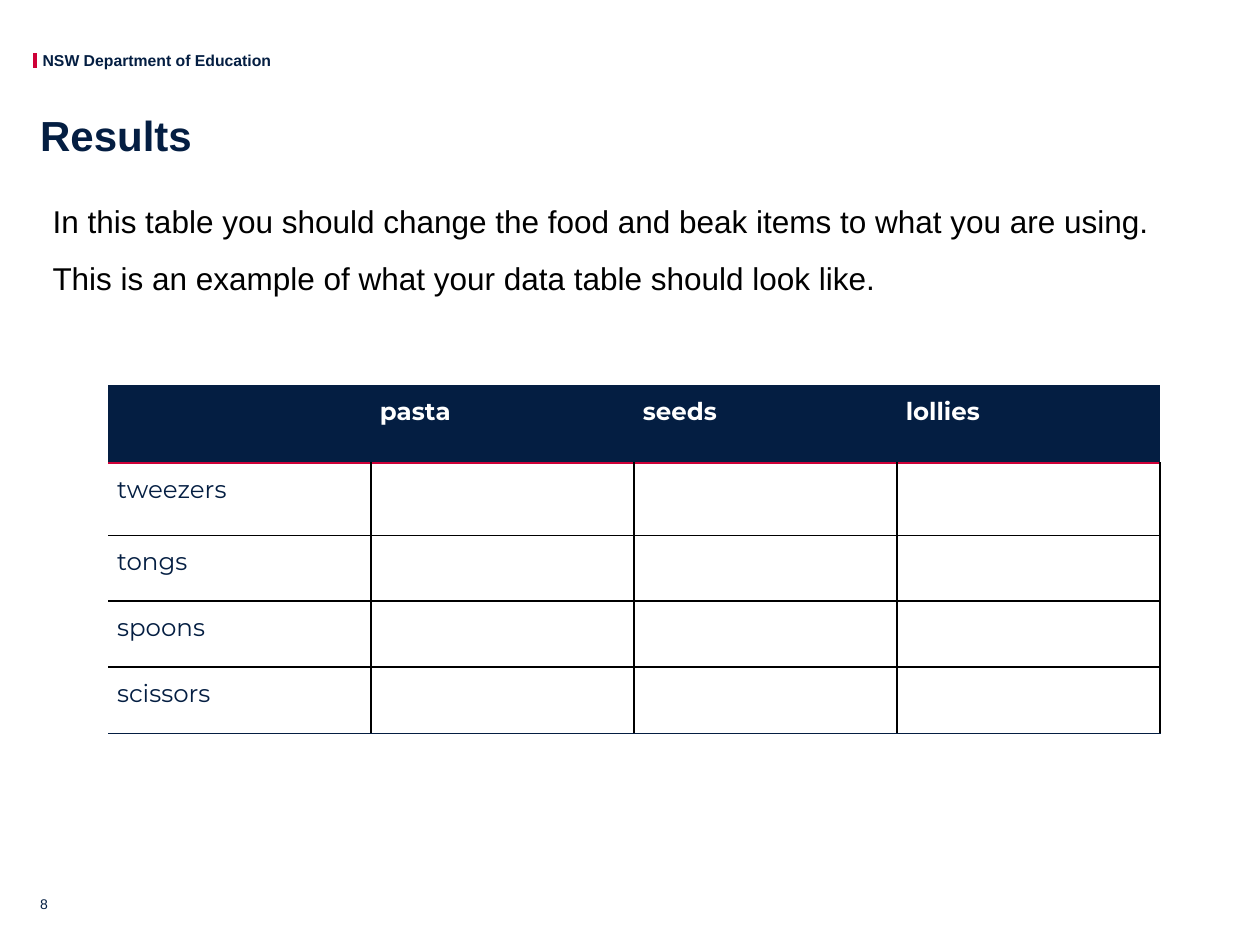
from dataclasses import dataclass

from lxml import etree
from pptx import Presentation
from pptx.dml.color import RGBColor
from pptx.enum.shapes import MSO_CONNECTOR
from pptx.enum.text import MSO_ANCHOR
from pptx.oxml.ns import qn
from pptx.util import Cm, Pt

STRAIGHT = MSO_CONNECTOR.STRAIGHT
TOP, MIDDLE, BOTTOM = MSO_ANCHOR.TOP, MSO_ANCHOR.MIDDLE, MSO_ANCHOR.BOTTOM

COLORS = {"navy": "041E42", "red": "CE0037", "black": "000000", "white": "FFFFFF"}


@dataclass(frozen=True)
class Label:
    text: str
    left: float
    top: float
    width: float
    height: float
    size: float
    color: str = "navy"
    bold: bool = False
    anchor: MSO_ANCHOR = TOP
    wrap: bool = True
    inset_x: float = 0
    inset_y: float = 0
    line_spacing: float = 1.0
    space_after: float = 0


@dataclass(frozen=True)
class Border:
    color: str
    width: float


LABELS = [
    Label("NSW Department of Education", 0.86, 1.02, 4.65, 0.38, 9, bold=True, wrap=False),
    Label("In this table you should change the food and beak items to what you are using. "
          "This is an example of what your data table should look like.",
          0.81, 3.56, 23.57, 2.74, 18, "black", inset_x=0.25, inset_y=0.13,
          line_spacing=1.5, space_after=4.5),
    Label("Results", 0.81, 2.08, 23.95, 1.4, 24, bold=True, anchor=MIDDLE, line_spacing=0.9),
    Label("8", 0.81, 17.37, 0.84, 1.02, 8, anchor=BOTTOM),
]

FOODS = ["pasta", "seeds", "lollies"]
BEAKS = ["tweezers", "tongs", "spoons", "scissors"]
COLUMN_WIDTH = 5.3
ROW_HEIGHTS = [1.57, 1.45, 1.33, 1.33, 1.33]

GRID_LINE = Border("black", 1)
HEADER_LINE = Border("red", 1.5)
LAST_LINE = Border("navy", 0.5)


def rgb(name: str) -> RGBColor:
    return RGBColor.from_string(COLORS[name])


def style_font(font, name: str, size: float, color: str, bold: bool) -> None:
    font.name, font.size, font.bold = name, Pt(size), bold
    font.color.rgb = rgb(color)


def add_label(page, label: Label) -> None:
    box = page.shapes.add_textbox(Cm(label.left), Cm(label.top), Cm(label.width), Cm(label.height))
    frame = box.text_frame
    frame.word_wrap = label.wrap
    frame.vertical_anchor = label.anchor
    frame.margin_left = frame.margin_right = Cm(label.inset_x)
    frame.margin_top = frame.margin_bottom = Cm(label.inset_y)
    para = frame.paragraphs[0]
    para.text = label.text
    para.line_spacing = label.line_spacing
    para.space_after = Pt(label.space_after)
    style_font(para.font, "Arial", label.size, label.color, label.bold)


def add_accent_bar(page) -> None:
    bar = page.shapes.add_connector(STRAIGHT, Cm(0.71), Cm(1.07), Cm(0.71), Cm(1.37))
    bar.line.color.rgb = rgb("red")
    bar.line.width = Pt(2.5)
    etree.SubElement(bar._element.spPr, qn("a:effectLst"))


def set_border(cell, side: str, border: Border | None) -> None:
    """Draw one side (L, R, T or B, in that order), or hide it; call before filling."""
    properties = cell._tc.get_or_add_tcPr()
    line = etree.SubElement(properties, qn(f"a:ln{side}"))
    if border is None:
        etree.SubElement(line, qn("a:noFill"))
        return
    line.set("w", str(Pt(border.width)))
    fill = etree.SubElement(line, qn("a:solidFill"))
    etree.SubElement(fill, qn("a:srgbClr"), val=COLORS[border.color])


def style_cell(cell, row: int, column: int, text: str) -> None:
    is_header = row == 0
    below = HEADER_LINE if is_header else LAST_LINE if row == len(BEAKS) else GRID_LINE
    above = None if is_header else HEADER_LINE if row == 1 else GRID_LINE
    set_border(cell, "L", None if is_header or column == 0 else GRID_LINE)
    set_border(cell, "R", None if is_header else GRID_LINE)
    set_border(cell, "T", above)
    set_border(cell, "B", below)
    if is_header:
        cell.fill.solid()
        cell.fill.fore_color.rgb = rgb("navy")
    else:
        cell.fill.background()
    cell.margin_left = cell.margin_right = Cm(0.18)
    cell.margin_top = cell.margin_bottom = Cm(0.23)
    para = cell.text_frame.paragraphs[0]
    para.text = text
    style_font(para.font, "Montserrat", 14, "white" if is_header else "navy", is_header)


def add_results_table(page) -> None:
    rows = [["", *FOODS]] + [[beak] + [""] * len(FOODS) for beak in BEAKS]
    columns = len(rows[0])
    table = page.shapes.add_table(len(rows), columns, Cm(2.18), Cm(7.77),
                                  Cm(COLUMN_WIDTH * columns), Cm(sum(ROW_HEIGHTS))).table
    table.first_row = table.horz_banding = False
    for column in table.columns:
        column.width = Cm(COLUMN_WIDTH)
    for row, height in zip(table.rows, ROW_HEIGHTS):
        row.height = Cm(height)
    for row_index, texts in enumerate(rows):
        for column_index, text in enumerate(texts):
            style_cell(table.cell(row_index, column_index), row_index, column_index, text)


def main() -> None:
    deck = Presentation()
    deck.slide_width, deck.slide_height = Cm(25.4), Cm(19.05)
    page = deck.slides.add_slide(deck.slide_layouts[6])
    add_accent_bar(page)
    for label in LABELS:
        add_label(page, label)
    add_results_table(page)
    deck.save("out.pptx")


if __name__ == "__main__":
    main()
